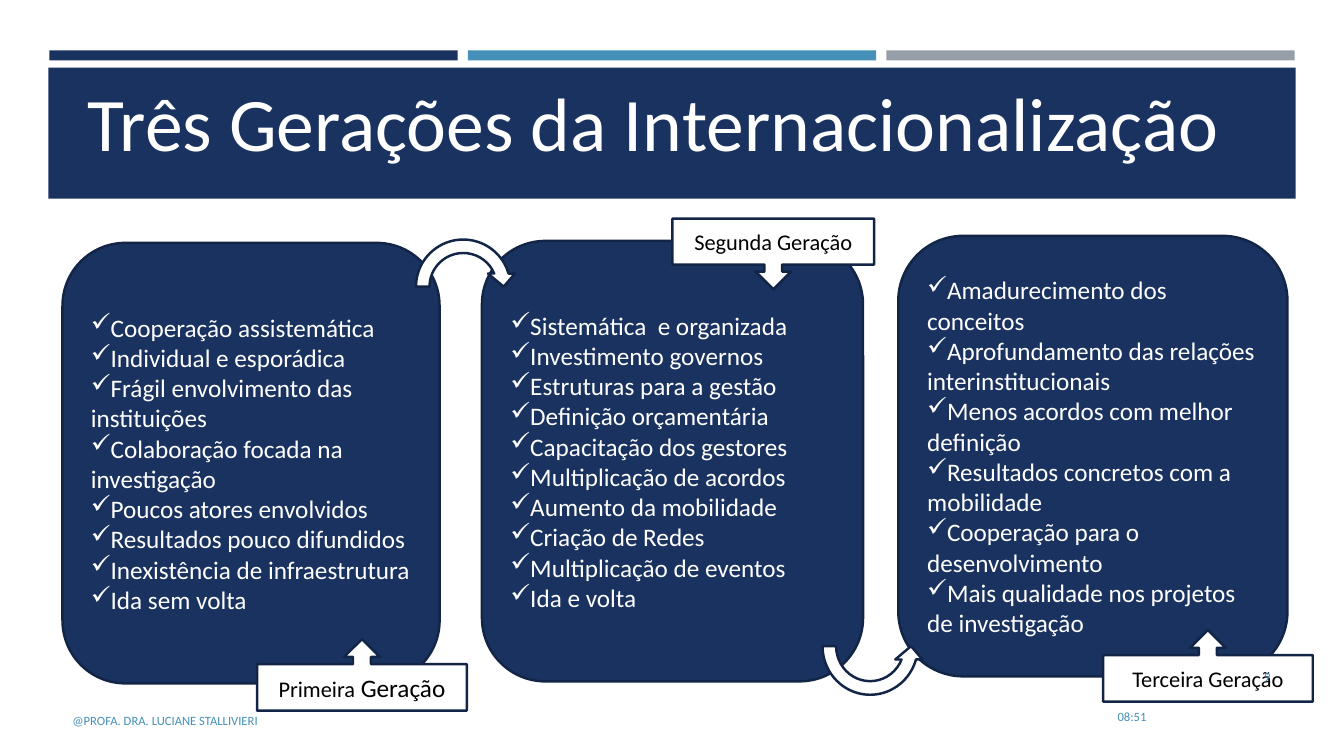
from lxml import etree
from pptx import Presentation
from pptx.dml.color import RGBColor
from pptx.enum.shapes import MSO_SHAPE as SHAPE
from pptx.enum.text import MSO_ANCHOR as ANCHOR, PP_ALIGN as ALIGN
from pptx.oxml.ns import qn
from pptx.util import Inches, Pt

FONT = "Calibri"
COLORS = {
    "navy": "1A3260", "outline": "132547", "blue": "4590B8",
    "gray": "969FA7", "white": "FFFFFF", "black": "000000",
}

# Left, top, width, alignment and items of each generation panel
PANELS = [
    (0.62, 2.41, 3.74, ALIGN.LEFT, [
        "Cooperação assistemática", "Individual e esporádica",
        "Frágil envolvimento das instituições",
        "Colaboração focada na investigação",
        "Poucos atores envolvidos", "Resultados pouco difundidos",
        "Inexistência de infraestrutura", "Ida sem volta"]),
    (4.78, 2.39, 3.78, ALIGN.JUSTIFY, [
        "Sistemática  e organizada", "Investimento governos",
        "Estruturas para a gestão", "Definição orçamentária",
        "Capacitação dos gestores", "Multiplicação de acordos",
        "Aumento da mobilidade", "Criação de Redes",
        "Multiplicação de eventos", "Ida e volta"]),
    (8.91, 2.34, 3.86, ALIGN.LEFT, [
        "Amadurecimento dos conceitos",
        "Aprofundamento das relações interinstitucionais",
        "Menos acordos com melhor definição",
        "Resultados concretos com a mobilidade",
        "Cooperação para o desenvolvimento",
        "Mais qualidade nos projetos de investigação"]),
]


def rgb(name):
    return RGBColor.from_string(COLORS[name])


def add_box(s, kind, x, y, w, h, fill, line=None):
    sp = s.shapes.add_shape(kind, Inches(x), Inches(y), Inches(w), Inches(h))
    sp.shadow.inherit = False
    sp.fill.solid()
    sp.fill.fore_color.rgb = rgb(fill)
    if line:
        sp.line.color.rgb = rgb(line)
        sp.line.width = Pt(1.75)
    else:
        sp.line.fill.background()
    return sp


def add_run(p, text, size, color):
    r = p.add_run()
    r.text = text
    r.font.name = FONT
    r.font.size = Pt(size)
    r.font.color.rgb = rgb(color)


def add_text(s, x, y, w, h, text, size, color, align=ALIGN.LEFT):
    tf = s.shapes.add_textbox(Inches(x), Inches(y), Inches(w), Inches(h)).text_frame
    tf.word_wrap = True
    tf.vertical_anchor = ANCHOR.MIDDLE
    p = tf.paragraphs[0]
    p.alignment = align
    add_run(p, text, size, color)
    return p


def add_panel(s, x, y, w, align, items):
    sp = add_box(s, SHAPE.ROUNDED_RECTANGLE, x, y, w, 4.37, "navy", "outline")
    tf = sp.text_frame
    tf.vertical_anchor = ANCHOR.MIDDLE
    for i, item in enumerate(items):
        p = tf.add_paragraph() if i else tf.paragraphs[0]
        p.alignment = align
        bullet = etree.SubElement(p._p.get_or_add_pPr(), qn("a:buChar"))
        bullet.set("char", "✓")
        add_run(p, item, 18, "white")


def add_callout(s, kind, x, y, w, h, runs):
    sp = add_box(s, kind, x, y, w, h, "white", "outline")
    sp.text_frame.vertical_anchor = ANCHOR.MIDDLE
    p = sp.text_frame.paragraphs[0]
    p.alignment = ALIGN.CENTER
    for text, size in runs:
        add_run(p, text, size, "black")


def add_curved_arrow(s, x, y, w, h, below=False):
    sp = add_box(s, SHAPE.CIRCULAR_ARROW, x, y, w, h, "white", "outline")
    if below:
        sp.rotation = 180
        sp._element.spPr.find(qn("a:xfrm")).set("flipH", "1")


def main():
    prs = Presentation()
    prs.slide_width, prs.slide_height = Inches(13.33), Inches(7.5)
    s = prs.slides.add_slide(prs.slide_layouts[6])

    # Header stripes and title band
    for i, color in enumerate(("navy", "blue", "gray")):
        add_box(s, SHAPE.RECTANGLE, 0.49 + i * 4.15, 0.5, 4.05, 0.1, color)
    add_box(s, SHAPE.RECTANGLE, 0.48, 0.67, 12.37, 1.3, "navy")
    title = add_text(s, 0.45, 0.65, 12.06, 1.11,
                     "Três Gerações da Internacionalização", 54, "white", ALIGN.CENTER)
    title.space_before, title.space_after = Pt(11), Pt(6)

    # Generation panels
    for panel in PANELS:
        add_panel(s, *panel)

    # Arrows from one generation to the next
    add_curved_arrow(s, 4.06, 2.31, 1.07, 1.07)
    add_curved_arrow(s, 8.09, 5.86, 1.08, 1.1, below=True)

    # Generation labels
    add_callout(s, SHAPE.UP_ARROW_CALLOUT, 2.55, 6.34, 2.08, 0.71,
                [("Primeira", 16), (" Geração", 18)])
    add_callout(s, SHAPE.UP_ARROW_CALLOUT, 10.94, 6.25, 2.08, 0.71,
                [("Terceira Geração", 16)])
    add_callout(s, SHAPE.DOWN_ARROW_CALLOUT, 6.67, 2.17, 2, 0.7,
                [("Segunda Geração", 16)])

    # Footer, time and slide number
    add_text(s, 0.62, 6.95, 7.56, 0.4, "@PROFA. DRA. LUCIANE STALLIVIERI", 9, "blue")
    add_text(s, 8.36, 6.91, 3.11, 0.4, "08:51", 9, "blue", ALIGN.RIGHT)
    add_text(s, 11.55, 6.51, 1.15, 0.4, "9", 9, "blue", ALIGN.RIGHT)

    prs.save("out.pptx")


if __name__ == "__main__":
    main()
